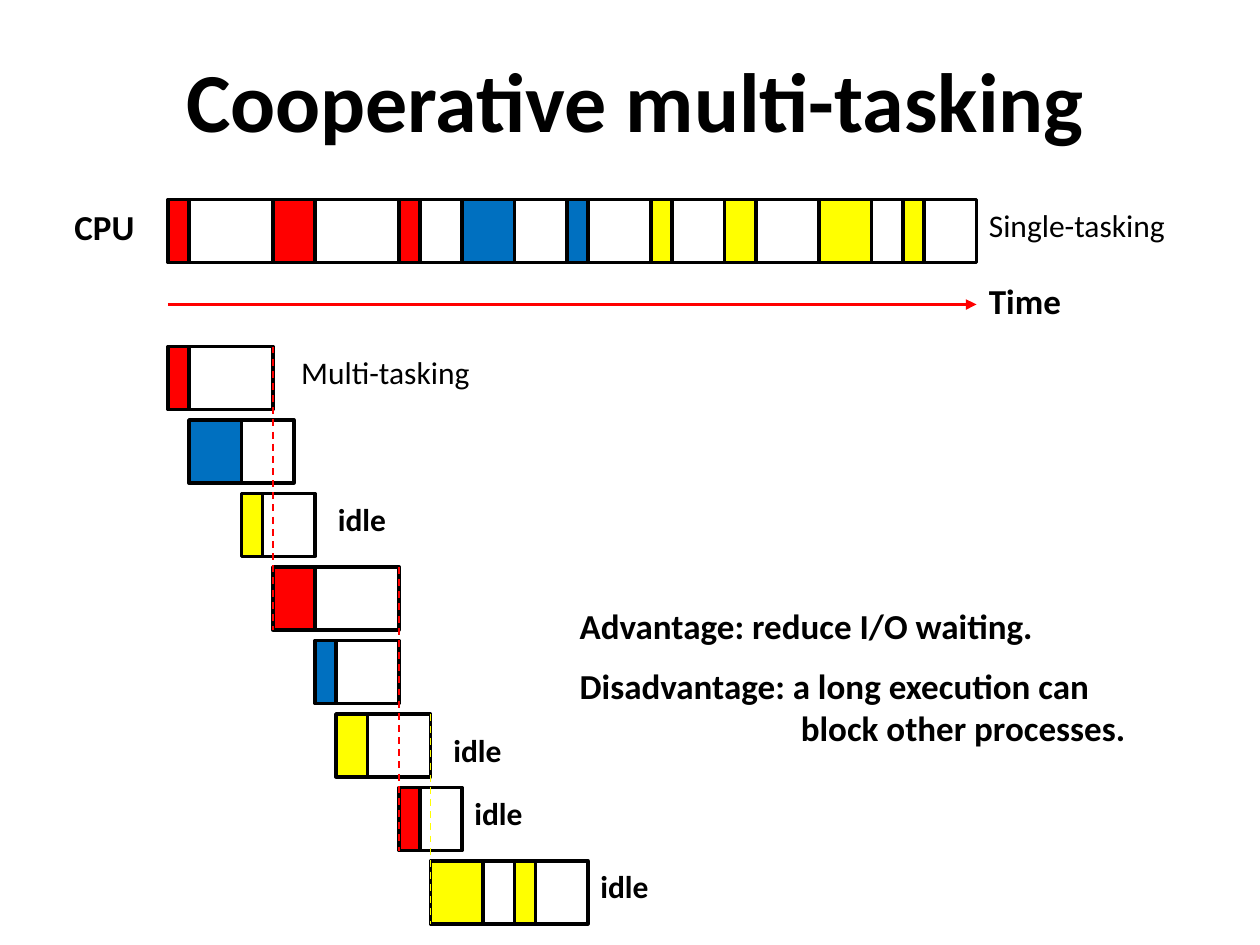
from typing import NamedTuple

import pptx
import pptx.util
from lxml import etree
from pptx.dml.color import RGBColor
from pptx.enum.dml import MSO_LINE
from pptx.enum.shapes import MSO_CONNECTOR, MSO_SHAPE
from pptx.enum.text import MSO_ANCHOR, MSO_AUTO_SIZE, PP_ALIGN
from pptx.oxml.ns import qn

RED = RGBColor(0xFF, 0x00, 0x00)
BLUE = RGBColor(0x00, 0x70, 0xC0)
YELLOW = RGBColor(0xFF, 0xFF, 0x00)
BLACK = RGBColor(0x00, 0x00, 0x00)
FONT = "Calibri"
UNITS_PER_INCH = 12
BAR_HEIGHT = 6
ROW_STEP = 7
CPU_TOP = 19
TASK_TOP = 33


class Burst(NamedTuple):
    color: RGBColor
    run: int
    wait: int


class Task(NamedTuple):
    start: int
    bursts: list[Burst]


class Label(NamedTuple):
    text: str
    left: float
    top: float
    width: float
    size: int = 18
    bold: bool = True
    align: PP_ALIGN = PP_ALIGN.LEFT


class Guide(NamedTuple):
    x: int
    first_row: int
    last_row: int
    color: RGBColor


class Point(NamedTuple):
    text: str
    before: int
    indent: float


SINGLE = Task(16, [
    Burst(RED, 2, 8), Burst(RED, 4, 8), Burst(RED, 2, 4),
    Burst(BLUE, 5, 5), Burst(BLUE, 2, 6),
    Burst(YELLOW, 2, 5), Burst(YELLOW, 3, 6), Burst(YELLOW, 5, 3), Burst(YELLOW, 2, 5),
])
MULTI = [
    Task(16, [Burst(RED, 2, 8)]),
    Task(18, [Burst(BLUE, 5, 5)]),
    Task(23, [Burst(YELLOW, 2, 5)]),
    Task(26, [Burst(RED, 4, 8)]),
    Task(30, [Burst(BLUE, 2, 6)]),
    Task(32, [Burst(YELLOW, 3, 6)]),
    Task(38, [Burst(RED, 2, 4)]),
    Task(41, [Burst(YELLOW, 5, 3), Burst(YELLOW, 2, 5)]),
]
GUIDES = [Guide(26, 0, 3, RED), Guide(38, 3, 6, RED), Guide(41, 5, 7, YELLOW)]
LABELS = [
    Label("CPU", 3, 19, 11, 20, align=PP_ALIGN.RIGHT),
    Label("Time", 93, 26, 11, 20),
    Label("Single-tasking", 93, 19, 24, bold=False),
    Label("Multi-tasking", 27.5, 33, 24, bold=False),
    Label("idle", 31, 47, 17),
    Label("idle", 42, 69, 17),
    Label("idle", 44, 75, 17),
    Label("idle", 56, 82, 17),
]
POINTS = [
    Point("Advantage: reduce I/O waiting.", 0, 0),
    Point("Disadvantage: a long execution can", 10, 0),
    Point("block other processes.", 0, 4.46),
]


def grid(n: float) -> pptx.util.Length:
    return pptx.util.Cm(n * 2.54 / UNITS_PER_INCH)


def place(sp, left: float, top: float, width: float, height: float) -> None:
    sp.left, sp.top, sp.width, sp.height = map(grid, (left, top, width, height))


def add_run(p, text: str, size: int, bold: bool) -> None:
    r = p.add_run()
    r.text = text
    r.font.name = FONT
    r.font.size = pptx.util.Pt(size)
    r.font.bold = bold
    r.font.color.rgb = BLACK


def prepare(tf) -> None:
    tf.word_wrap = True
    tf.auto_size = MSO_AUTO_SIZE.NONE
    tf.vertical_anchor = MSO_ANCHOR.TOP


def add_block(s, left: int, top: int, width: int, color: RGBColor | None) -> None:
    sp = s.shapes.add_shape(MSO_SHAPE.RECTANGLE, *map(grid, (left, top, width, BAR_HEIGHT)))
    sp.shadow.inherit = False
    if color is None:
        sp.fill.background()
    else:
        sp.fill.solid()
        sp.fill.fore_color.rgb = color
    sp.line.color.rgb = BLACK
    sp.line.width = pptx.util.Pt(2)


def add_task(s, task: Task, top: int) -> None:
    x = task.start
    for burst in task.bursts:
        add_block(s, x, top, burst.run, burst.color)
        add_block(s, x + burst.run, top, burst.wait, None)
        x += burst.run + burst.wait


def add_line(s, x1: int, y1: int, x2: int, y2: int, color: RGBColor, width: int):
    sp = s.shapes.add_connector(MSO_CONNECTOR.STRAIGHT, *map(grid, (x1, y1, x2, y2)))
    sp.line.color.rgb = color
    sp.line.width = pptx.util.Pt(width)
    etree.SubElement(sp.element.spPr, qn("a:effectLst"))
    return sp


def add_label(s, label: Label) -> None:
    sp = s.shapes.add_textbox(*map(grid, (label.left, label.top, label.width, 5)))
    prepare(sp.text_frame)
    p = sp.text_frame.paragraphs[0]
    p.alignment = label.align
    add_run(p, label.text, label.size, label.bold)


def fill_points(sp, points: list[Point]) -> None:
    tf = sp.text_frame
    prepare(tf)
    for i, point in enumerate(points):
        p = tf.add_paragraph() if i else tf.paragraphs[0]
        p.space_before = pptx.util.Pt(point.before)
        pPr = p._p.get_or_add_pPr()
        pPr.set("marL", str(pptx.util.Cm(point.indent)))
        pPr.set("indent", "0")
        etree.SubElement(pPr, qn("a:buNone"))
        add_run(p, point.text, 20, True)


def main() -> None:
    prs = pptx.Presentation()
    prs.slide_width, prs.slide_height = pptx.util.Cm(25.4), pptx.util.Cm(19.05)
    s = prs.slides.add_slide(prs.slide_layouts[1])

    title, body = s.placeholders
    place(title, 7, 4, 107, 11)
    prepare(title.text_frame)
    p = title.text_frame.paragraphs[0]
    p.alignment = PP_ALIGN.CENTER
    add_run(p, "Cooperative multi-tasking", 48, True)
    place(body, 54, 57, 63, 15)
    fill_points(body, POINTS)

    add_task(s, SINGLE, CPU_TOP)
    arrow = add_line(s, 16, 29, 93, 29, RED, 2)
    etree.SubElement(arrow.line._get_or_add_ln(), qn("a:tailEnd"), type="triangle")

    for row, task in enumerate(MULTI):
        add_task(s, task, TASK_TOP + row * ROW_STEP)
    for guide in GUIDES:
        top = TASK_TOP + guide.first_row * ROW_STEP
        bottom = TASK_TOP + guide.last_row * ROW_STEP + BAR_HEIGHT
        sp = add_line(s, guide.x, top, guide.x, bottom, guide.color, 1)
        sp.line.dash_style = MSO_LINE.DASH
    for label in LABELS:
        add_label(s, label)

    prs.save("out.pptx")


if __name__ == "__main__":
    main()
